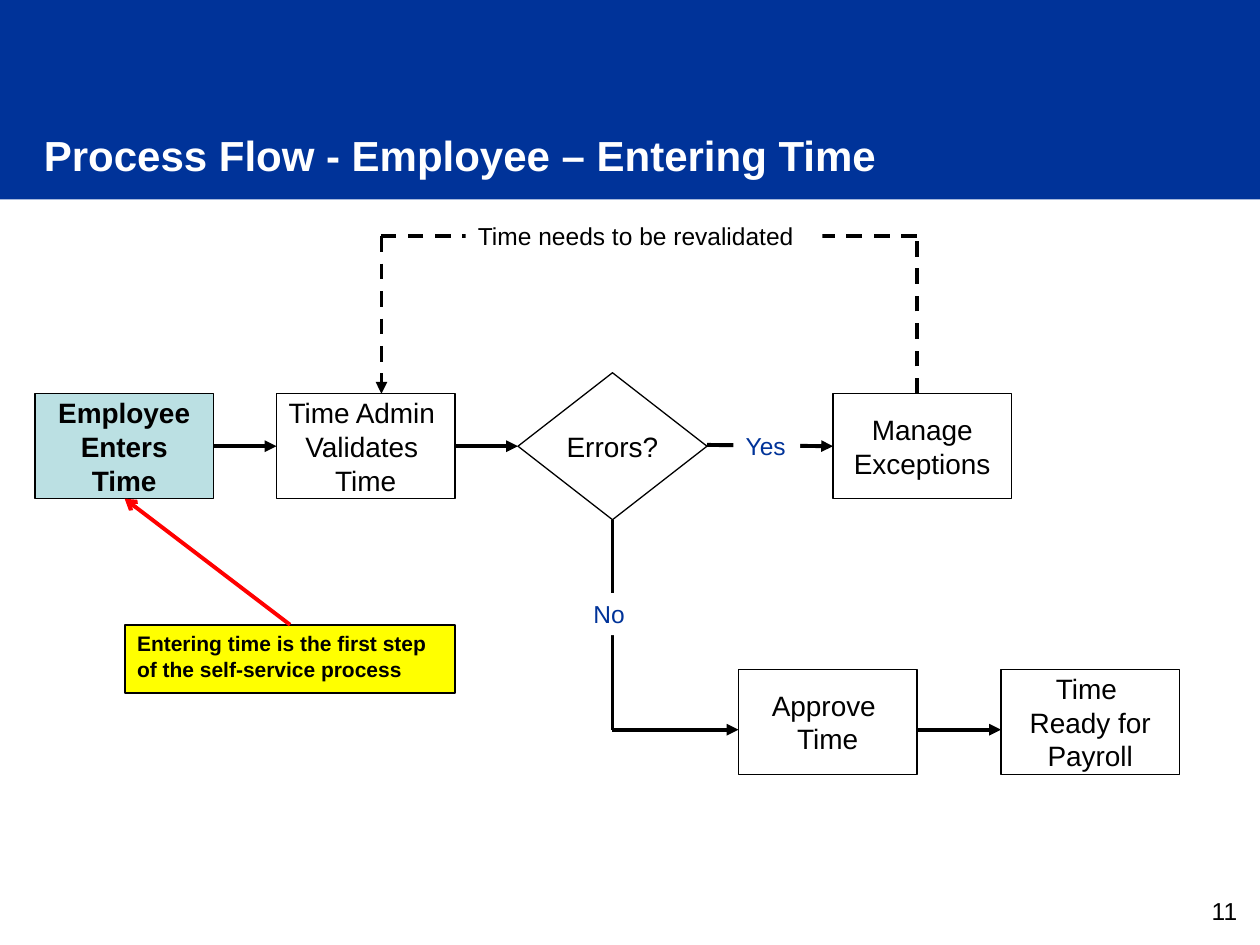
from dataclasses import dataclass
from lxml import etree
from pptx import Presentation
from pptx import util as u
from pptx.dml import color
from pptx.enum import dml, shapes, text
from pptx.oxml import ns


@dataclass(frozen=True)
class Theme:
    face: str = "Arial"
    navy: str = "003399"
    white: str = "FFFFFF"
    black: str = "000000"
    aqua: str = "BBE0E3"
    yellow: str = "FFFF00"
    red: str = "FF0000"
    title: int = 24
    step: int = 16
    label: int = 14
    note: int = 12
    thin: float = 0.75
    edge: float = 1.25
    arrow: float = 2.25


T = Theme()
COLS, ROWS = 240, 180
STEP = (34, 20)
LEFT, MID = text.PP_ALIGN.LEFT, text.PP_ALIGN.CENTER
TOP, CORE = text.MSO_ANCHOR.TOP, text.MSO_ANCHOR.MIDDLE
RECT = shapes.MSO_SHAPE.RECTANGLE


def rgb(code):
    return color.RGBColor.from_string(code)


def assign(item, values):
    for name, value in values.items():
        setattr(item, name, value)


class Area:
    def __init__(self, slide, unit, col, row):
        self.slide, self.unit, self.col, self.row = slide, unit, col, row

    def point(self, col, row):
        return (round((self.col + col) * self.unit),
                round((self.row + row) * self.unit))

    def letter(self, frame, lines, size, ink=T.black, bold=False,
               align=LEFT, anchor=TOP, wrap=True):
        assign(frame, {"word_wrap": wrap, "vertical_anchor": anchor})
        for i, line in enumerate(lines):
            para = frame.paragraphs[0] if i == 0 else frame.add_paragraph()
            assign(para, {"text": line, "alignment": align})
            assign(para.font, {"name": T.face, "size": u.Pt(size), "bold": bold})
            para.font.color.rgb = rgb(ink)

    def label(self, col, row, wide, high, line, size, **style):
        box = self.slide.shapes.add_textbox(
            *self.point(col, row), round(wide * self.unit), round(high * self.unit))
        self.letter(box.text_frame, [line], size, **style)

    def shape(self, col, row, wide, high, fill=None, edge=None, kind=RECT):
        item = self.slide.shapes.add_shape(
            kind, *self.point(col, row),
            round(wide * self.unit), round(high * self.unit))
        item.shadow.inherit = False
        if fill:
            item.fill.solid()
            item.fill.fore_color.rgb = rgb(fill)
        else:
            item.fill.background()
        if edge:
            item.line.color.rgb = rgb(T.black)
            item.line.width = u.Pt(edge)
        else:
            item.line.fill.background()
        return item

    def link(self, start, end, head=None, dash=False, ink=T.black):
        wire = self.slide.shapes.add_connector(
            shapes.MSO_CONNECTOR.STRAIGHT, *self.point(*start), *self.point(*end))
        wire.line.color.rgb = rgb(ink)
        wire.line.width = u.Pt(T.arrow)
        if dash:
            wire.line.dash_style = dml.MSO_LINE.DASH
        props = wire.element.spPr
        if head:
            tip = etree.SubElement(props.find(ns.qn("a:ln")), ns.qn("a:tailEnd"))
            tip.set("type", head)
        etree.SubElement(props, ns.qn("a:effectLst"))


def banner(area):
    area.shape(0, 0, COLS, 38, T.navy)
    area.label(6, 22, 216, 15, "Process Flow - Employee – Entering Time",
               T.title, ink=T.white, bold=True, anchor=CORE)


def flow(area):
    steps = [
        (46, 34, ["Time Admin ", "Validates ", "Time"], None),
        (0, 34, ["Employee", "Enters", "Time"], T.aqua),
        (152, 34, ["Manage", "Exceptions"], None),
        (134, 86.5, ["Approve ", "Time"], None),
        (184, 86.5, ["Time ", "Ready for", "Payroll"], None),
    ]
    style = {"align": MID, "anchor": CORE, "wrap": False}
    for col, row, lines, fill in steps:
        box = area.shape(col, row, *STEP, fill, T.thin)
        area.letter(box.text_frame, lines, T.step, bold=bool(fill), **style)
    test = area.shape(92, 30, 36, 28, edge=T.thin, kind=shapes.MSO_SHAPE.DIAMOND)
    area.letter(test.text_frame, ["Errors?"], T.step, **style)

    for start, end, head, dash in [
        ((34, 44), (46, 44), "triangle", False),
        ((80, 44), (92, 44), "triangle", False),
        ((128, 43.75), (152, 44), "triangle", False),
        ((110, 58), (110, 98), None, False),
        ((168, 98), (184, 98), "triangle", False),
        ((110, 98), (134, 98), "triangle", False),
        ((168, 34), (168, 4), None, True),
        ((168, 4), (66, 4), None, True),
        ((66, 4), (66, 34), "triangle", True),
    ]:
        area.link(start, end, head, dash)

    for col, row, wide, line, ink in [
        (133, 40, 12.75, "Yes", T.navy),
        (82, 0, 68, "Time needs to be revalidated", T.black),
        (104, 72, 12, "No", T.navy),
    ]:
        tag = area.shape(col, row, wide, 8, T.white)
        area.letter(tag.text_frame, [line], T.label, ink=ink, wrap=wide > 20)


def note(area):
    box = area.shape(0, 24, 63, 13, T.yellow, T.edge)
    area.letter(box.text_frame,
                ["Entering time is the first step of the self-service process"],
                T.note, bold=True)
    area.link((31.5, 24), (0, 0), "arrow", ink=T.red)


def footer(area):
    area.label(0, 0, 56, 12.5, "11", T.label, align=text.PP_ALIGN.RIGHT)


def main():
    deck = Presentation()
    assign(deck, {"slide_width": u.Inches(10), "slide_height": u.Inches(7.5)})
    slide = deck.slides.add_slide(deck.slide_layouts[6])
    unit = deck.slide_width / COLS
    for part, col, row in [
        (banner, 0, 0),
        (footer, 182, ROWS - 10.5),
        (flow, 6.67, 41),
        (note, 23.75, 95),
    ]:
        part(Area(slide, unit, col, row))
    deck.save("out.pptx")


if __name__ == "__main__":
    main()
